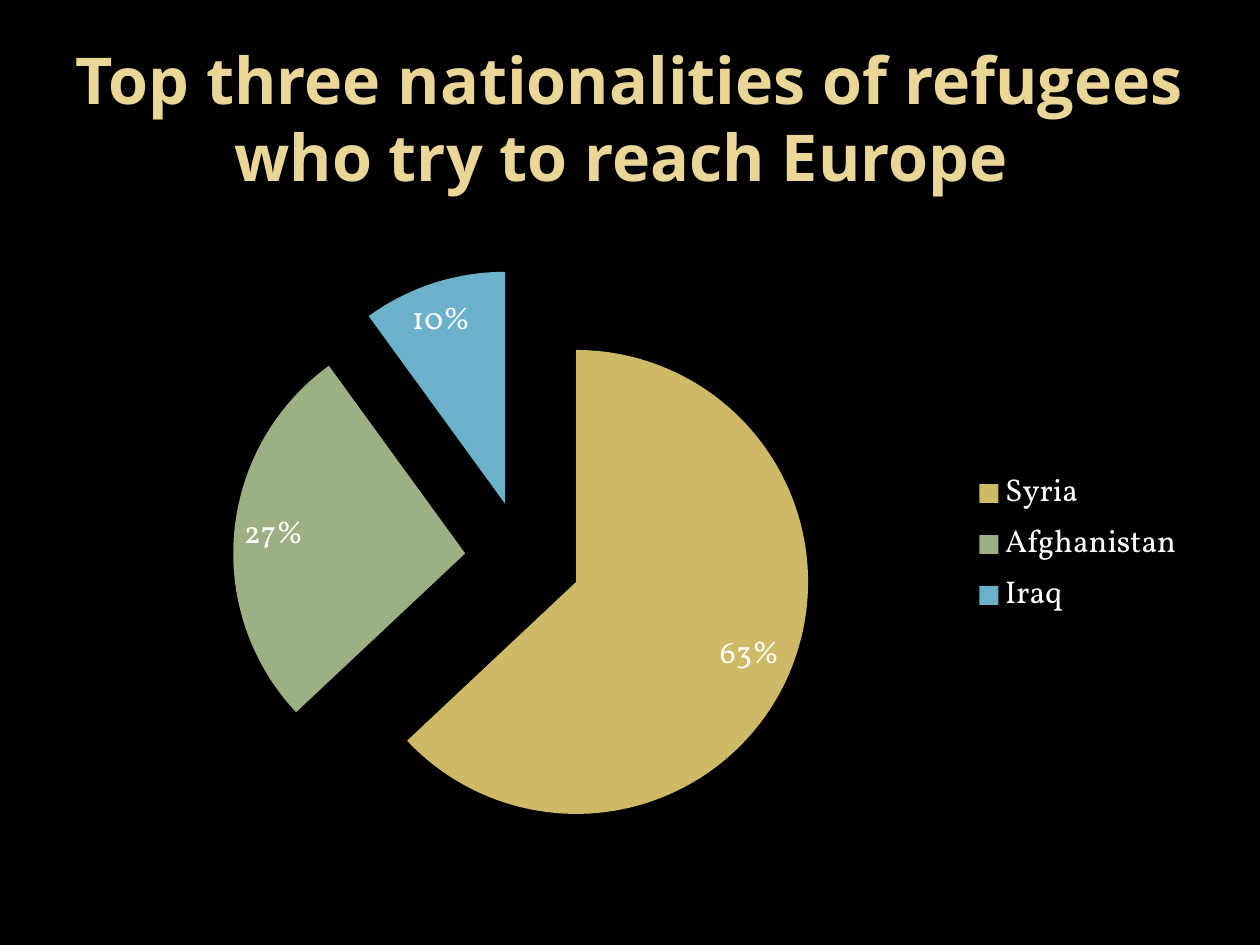
from dataclasses import dataclass

from lxml.etree import SubElement
from pptx import Presentation
from pptx.chart.data import CategoryChartData
from pptx.dml.color import RGBColor
from pptx.enum.chart import XL_CHART_TYPE as ChartType
from pptx.enum.chart import XL_LABEL_POSITION as LabelPosition
from pptx.enum.chart import XL_LEGEND_POSITION as LegendPosition
from pptx.enum.text import MSO_ANCHOR as Anchor
from pptx.enum.text import PP_ALIGN as Align
from pptx.oxml import parse_xml
from pptx.oxml.ns import nsdecls, qn
from pptx.util import Emu, Pt

PX = 914400 / 126
TITLE_ONLY = 5


@dataclass(frozen=True)
class Theme:
    background: str = "000000"
    heading: str = "EAD696"
    text: str = "FFFFFF"
    slices: tuple = ("CEB966", "9CB084", "6BB1C9")
    heading_font: str = "Open Sans"
    chart_font: str = "Vollkorn"
    heading_size: float = 36.9
    chart_size: float = 18


THEME = Theme()


def px(length):
    return Emu(round(length * PX))


def format_font(font, *, name, size, color, bold=False):
    font.name = name
    font.size = Pt(size)
    font.bold = bold
    font.color.rgb = RGBColor.from_string(color)


def write_text(frame, text, *, align=Align.CENTER, anchor=Anchor.MIDDLE, **font_format):
    frame.word_wrap = True
    frame.vertical_anchor = anchor
    frame.margin_left = frame.margin_right = 0
    frame.margin_top = frame.margin_bottom = 0
    paragraph = frame.paragraphs[0]
    paragraph.alignment = align
    run = paragraph.add_run()
    run.text = text
    format_font(run.font, **font_format)


def place_heading(slide, text, left, top, width, height):
    heading = slide.shapes.title
    heading.left, heading.top = px(left), px(top)
    heading.width, heading.height = px(width), px(height)
    write_text(heading.text_frame, text, name=THEME.heading_font,
               size=THEME.heading_size, color=THEME.heading, bold=True)


def set_plot_layout(chart, **fractions):
    plot_area = chart._chartSpace.find(".//" + qn("c:plotArea"))
    for previous in plot_area.findall(qn("c:layout")):
        plot_area.remove(previous)
    layout = parse_xml(f"<c:layout {nsdecls('c')}/>")
    manual = SubElement(layout, qn("c:manualLayout"))
    settings = {"layoutTarget": "inner", "xMode": "edge", "yMode": "edge", **fractions}
    for tag, value in settings.items():
        SubElement(manual, qn(f"c:{tag}")).set("val", str(value))
    plot_area.insert(0, layout)


def explode_slices(series, percent):
    explosion = parse_xml(f'<c:explosion {nsdecls("c")} val="{percent}"/>')
    series._element.find(qn("c:tx")).addnext(explosion)


def place_nationality_pie(slide, shares, left, top, width, height):
    data = CategoryChartData()
    data.categories = list(shares)
    data.add_series("Series 1", list(shares.values()))
    chart = slide.shapes.add_chart(ChartType.PIE, px(left), px(top),
                                   px(width), px(height), data).chart
    chart.has_title = False
    chart_format = dict(name=THEME.chart_font, size=THEME.chart_size, color=THEME.text)
    format_font(chart.font, **chart_format)
    set_plot_layout(chart, x=46 / width, y=49 / height, w=828 / width, h=580 / height)

    chart.has_legend = True
    chart.legend.position = LegendPosition.RIGHT
    chart.legend.include_in_layout = False

    pie = chart.plots[0]
    pie.vary_by_categories = True
    explode_slices(pie.series[0], 25)
    for index, color in enumerate(THEME.slices):
        fill = pie.series[0].points[index].format.fill
        fill.solid()
        fill.fore_color.rgb = RGBColor.from_string(color)

    pie.has_data_labels = True
    labels = pie.data_labels
    labels.show_percentage = True
    labels.show_value = False
    labels.number_format = "0%"
    labels.number_format_is_linked = False
    labels.position = LabelPosition.BEST_FIT
    format_font(labels.font, **chart_format)


def main():
    presentation = Presentation()
    presentation.slide_width, presentation.slide_height = px(1260), px(945)
    slide = presentation.slides.add_slide(presentation.slide_layouts[TITLE_ONLY])
    background = slide.background.fill
    background.solid()
    background.fore_color.rgb = RGBColor.from_string(THEME.background)

    place_heading(slide, "Top three nationalities of refugees who try to reach Europe ",
                  63, 38, 1134, 158)
    place_nationality_pie(slide, {"Syria": 63, "Afghanistan": 27, "Iraq": 10},
                          63, 220, 1134, 649)
    presentation.save("out.pptx")


if __name__ == "__main__":
    main()
